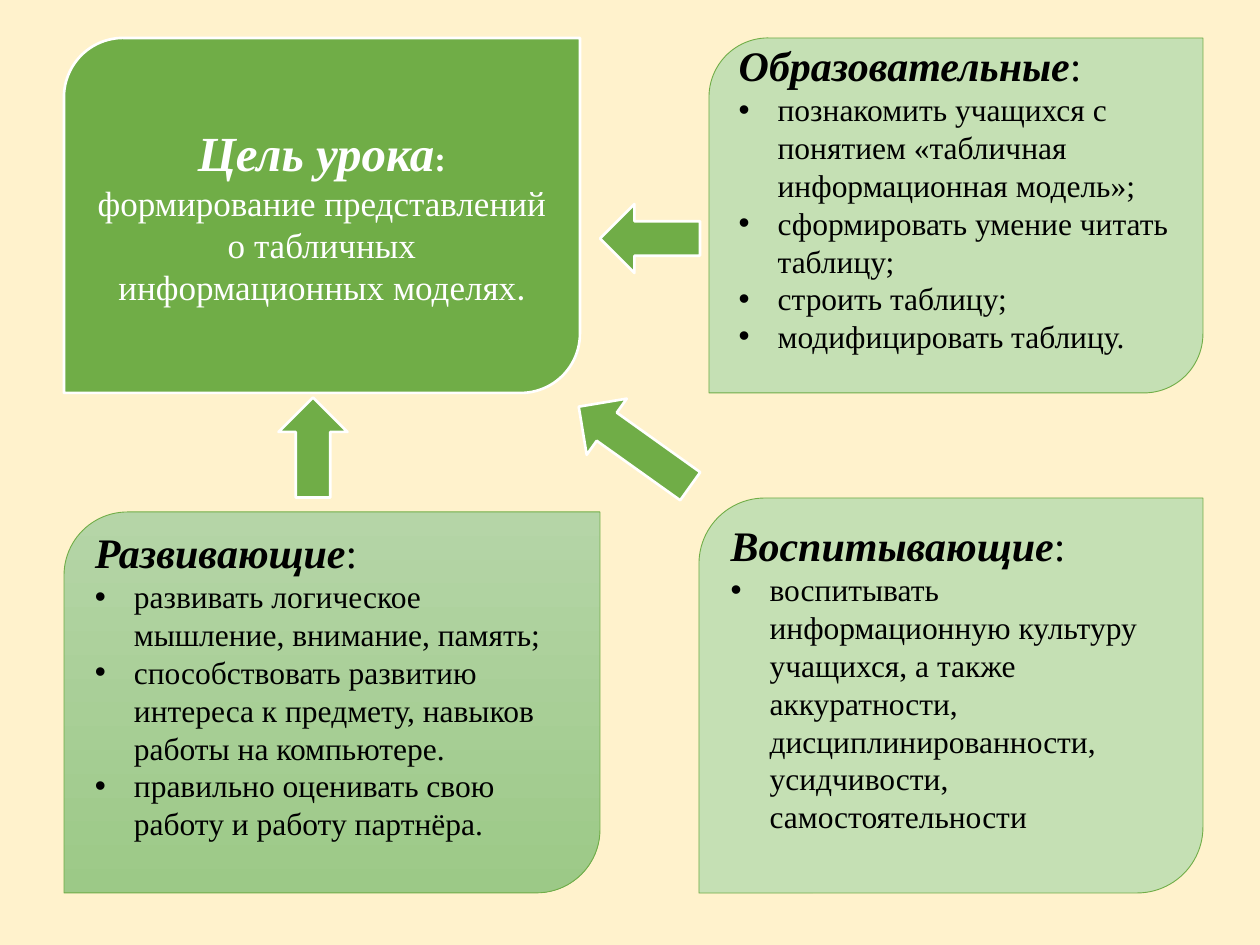
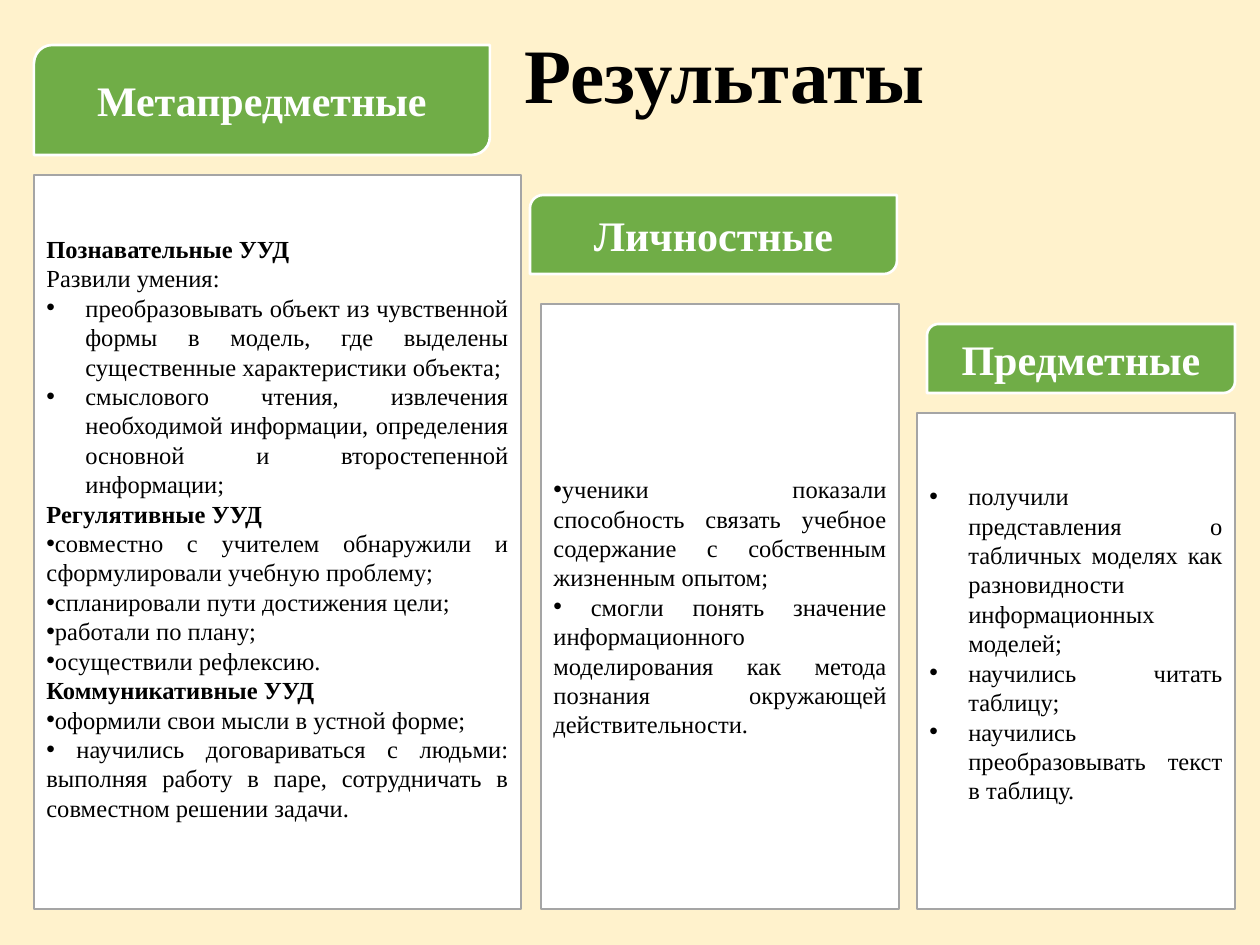
from pptx import Presentation
from pptx.dml.color import RGBColor
from pptx.enum.shapes import MSO_SHAPE
from pptx.enum.text import MSO_ANCHOR, PP_ALIGN
from pptx.oxml.ns import qn
from pptx.util import Emu, Pt
from lxml import etree

LEAF = MSO_SHAPE.ROUND_2_DIAG_RECTANGLE
RECT = MSO_SHAPE.RECTANGLE
ARROW = MSO_SHAPE.LEFT_ARROW
LEFT, MID, JUST = PP_ALIGN.LEFT, PP_ALIGN.CENTER, PP_ALIGN.JUSTIFY
MIDDLE = MSO_ANCHOR.MIDDLE

SCALE = 914400 / 126
WIDE, HIGH = 1260, 945
INDENT = 39
PAD = 6
FOOT = 909

FACE = "Times New Roman"
THEME = {
    "page": "FFF2CC",
    "boxes": {
        "main": {"fill": ["70AD47"], "line": "FFFFFF", "width": 1.5},
        "pale": {"fill": ["C5E0B4"], "line": "70AD47", "width": 0.5},
        "fade": {"fill": ["B5D5A7", "9CC987"], "line": "70AD47", "width": 0.5},
        "body": {"fill": ["FFFFFF"], "line": "A5A5A5", "width": 1},
    },
    "fonts": {
        "title": {"size": 44, "bold": True, "color": "000000"},
        "goal": {"size": 28, "bold": True, "italic": True, "color": "FFFFFF"},
        "colon": {"size": 20, "bold": True, "color": "FFFFFF"},
        "aim": {"size": 20, "color": "FFFFFF"},
        "dot": {"size": 20, "color": "FFFFFF", "name": "Calibri"},
        "tab": {"size": 24, "bold": True, "color": "FFFFFF"},
        "head": {"size": 24, "bold": True, "italic": True, "color": "000000"},
        "mark": {"size": 24, "color": "000000"},
        "item": {"size": 18, "color": "000000"},
        "part": {"size": 14, "bold": True, "color": "000000"},
        "text": {"size": 14, "color": "000000"},
    },
}

GOAL = [
    ("Цель урока", "goal"),
    (": ", "colon"),
    ("формирование представлений о табличных информационных моделях", "aim"),
    (".", "dot"),
]
GOAL_BOX = (64, 38, 516, 355)

PANELS = [
    ("Образовательные", "pale", (709, 38, 494, 355), [
        "познакомить учащихся с понятием «табличная информационная модель»;",
        "сформировать умение читать таблицу;",
        "строить таблицу;",
        "модифицировать таблицу.",
    ]),
    ("Воспитывающие", "pale", (699, 498, 504, 395), [
        "воспитывать информационную культуру учащихся, а также аккуратности, "
        "дисциплинированности, усидчивости, самостоятельности",
    ]),
    ("Развивающие", "fade", (64, 512, 536, 381), [
        "развивать логическое мышление, внимание, память;",
        "способствовать развитию интереса к предмету, навыков работы на компьютере.",
        "правильно оценивать свою работу и работу партнёра.",
    ]),
]
PANEL_LIFT = 36

ARROWS = [
    ((600, 204, 100, 69), 0),
    ((263, 413, 100, 69), 90),
    ((566, 412, 137, 69), 35.5),
]

TITLE = "Результаты"
TITLE_BOX = (512, 0, 685, 158)

RESULTS = [
    {"name": "Метапредметные", "tab": (34, 45, 456, 110), "body": (34, 175, 487), "lift": 28,
     "lines": [
         ("part", "Познавательные УУД"),
         ("plain", "Развили умения:"),
         ("hang", "преобразовывать объект из чувственной формы в модель, "
                  "где выделены существенные характеристики объекта;"),
         ("hang", "смыслового чтения, извлечения необходимой информации, "
                  "определения основной и второстепенной информации;"),
         ("part", "Регулятивные УУД"),
         ("flush", "совместно с учителем обнаружили и сформулировали учебную проблему;"),
         ("flush", "спланировали пути достижения цели;"),
         ("flush", "работали по плану;"),
         ("flush", "осуществили рефлексию."),
         ("part", "Коммуникативные УУД"),
         ("flush", "оформили свои мысли в устной форме;"),
         ("flush", " научились договариваться с людьми: выполняя работу в паре, "
                   "сотрудничать в совместном решении задачи."),
     ]},
    {"name": "Личностные", "tab": (530, 195, 367, 79), "body": (541, 304, 358), "lift": 0,
     "lines": [
         ("flush", "ученики показали способность связать учебное содержание "
                   "с собственным жизненным опытом;"),
         ("flush", " смогли понять значение информационного моделирования "
                   "как метода познания окружающей действительности."),
     ]},
    {"name": "Предметные", "tab": (927, 324, 308, 69), "body": (917, 413, 318), "lift": 36,
     "lines": [
         ("hang", "получили представления о табличных моделях "
                  "как разновидности информационных моделей;"),
         ("hang", "научились читать таблицу;"),
         ("hang", "научились преобразовывать текст в таблицу."),
     ]},
]


def px(n):
    return Emu(round(n * SCALE))


def rgb(code):
    return RGBColor.from_string(code)


def style(font, kind):
    look = {"name": FACE, "bold": False, "italic": False, **THEME["fonts"][kind]}
    look["size"] = Pt(look["size"])
    font.color.rgb = rgb(look.pop("color"))
    for key, value in look.items():
        setattr(font, key, value)


def bullet(para, hang):
    props = para._p.get_or_add_pPr()
    step = px(INDENT) if hang else 0
    props.set("marL", str(step))
    props.set("indent", str(-step))
    etree.SubElement(props, qn("a:buFont")).set("typeface", "Arial")
    etree.SubElement(props, qn("a:buChar")).set("char", "•")


def write(shape, paras, align, lift=0):
    frame = shape.text_frame
    form = {"word_wrap": True, "vertical_anchor": MIDDLE,
            "margin_top": px(PAD), "margin_bottom": px(PAD + lift)}
    for key, value in form.items():
        setattr(frame, key, value)
    for i, (mode, runs) in enumerate(paras):
        para = frame.add_paragraph() if i else frame.paragraphs[0]
        para.alignment = align
        if mode in ("hang", "flush"):
            bullet(para, mode == "hang")
        for text, kind in runs:
            run = para.add_run()
            run.text = text
            style(run.font, kind)


def draw(slide, form, box, kind):
    look = THEME["boxes"][kind]
    shape = slide.shapes.add_shape(form, *map(px, box))
    shape.shadow.inherit = False
    tones = look["fill"]
    if len(tones) > 1:
        shape.fill.gradient()
        shape.fill.gradient_angle = 270
        for stop, tone in zip(shape.fill.gradient_stops, tones):
            stop.color.rgb = rgb(tone)
    else:
        shape.fill.solid()
        shape.fill.fore_color.rgb = rgb(tones[0])
    shape.line.color.rgb = rgb(look["line"])
    shape.line.width = Pt(look["width"])
    return shape


def goals(slide):
    write(draw(slide, LEAF, GOAL_BOX, "main"), [("plain", GOAL)], MID)
    for name, kind, box, items in PANELS:
        paras = [("plain", [(name, "head"), (":", "mark")])]
        paras += [("hang", [(item, "item")]) for item in items]
        write(draw(slide, LEAF, box, kind), paras, LEFT, PANEL_LIFT)
    for box, turn in ARROWS:
        draw(slide, ARROW, box, "main").rotation = turn


def results(slide):
    title = slide.shapes.title
    for key, n in zip(("left", "top", "width", "height"), TITLE_BOX):
        setattr(title, key, px(n))
    write(title, [("plain", [(TITLE, "title")])], LEFT)
    title.text_frame.paragraphs[0].line_spacing = 0.9
    for part in RESULTS:
        tab = draw(slide, LEAF, part["tab"], "main")
        write(tab, [("plain", [(part["name"], "tab")])], MID)
        left, top, width = part["body"]
        body = draw(slide, RECT, (left, top, width, FOOT - top), "body")
        paras = [(mode, [(text, "part" if mode == "part" else "text")])
                 for mode, text in part["lines"]]
        write(body, paras, JUST, part["lift"])


def main():
    deck = Presentation()
    deck.slide_width, deck.slide_height = px(WIDE), px(HIGH)
    page = deck.slide_master.background.fill
    page.solid()
    page.fore_color.rgb = rgb(THEME["page"])
    goals(deck.slides.add_slide(deck.slide_layouts[6]))
    results(deck.slides.add_slide(deck.slide_layouts[5]))
    deck.save("out.pptx")


if __name__ == "__main__":
    main()
